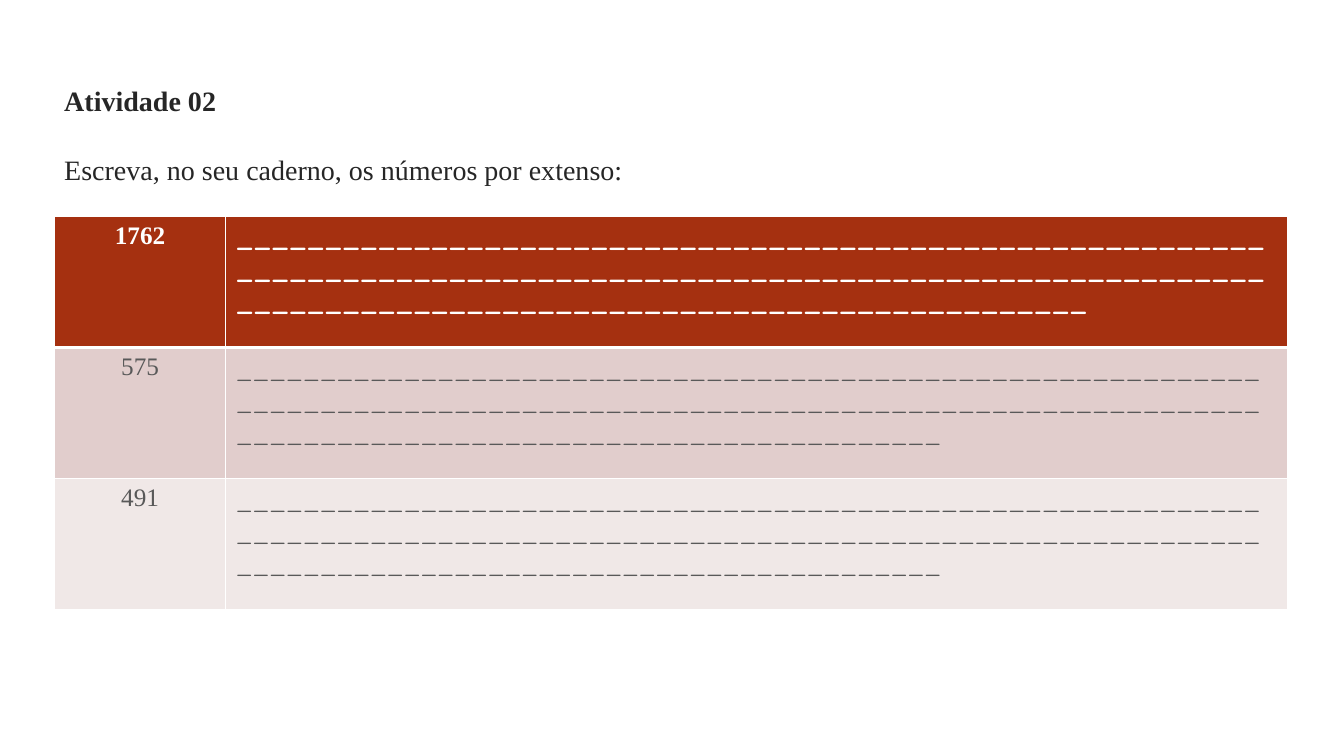
import pptx
import pptx.util
import pptx.dml.color
import pptx.enum.text
import pptx.oxml.ns
import lxml.etree
from dataclasses import dataclass

Cm, Pt = pptx.util.Cm, pptx.util.Pt


@dataclass(frozen=True)
class Theme:
    serif: str = "Times New Roman"
    rounded: str = "Quicksand"
    heading_size: int = 20
    table_size: int = 18
    heading: str = "262626"
    body: str = "595959"
    white: str = "FFFFFF"
    header_fill: str = "A53010"
    dark_band: str = "E1CDCC"
    light_band: str = "F0E8E7"


theme = Theme()


def style(paragraph, font_name, size, color, bold):
    for run in paragraph.runs:
        run.font.name = font_name
        run.font.size = Pt(size)
        run.font.bold = bold
        run.font.color.rgb = pptx.dml.color.RGBColor.from_string(color)


def add_border(cell, side, width):
    qn = pptx.oxml.ns.qn
    line = lxml.etree.SubElement(cell._tc.get_or_add_tcPr(), qn(f"a:ln{side}"), w=str(Pt(width)))
    solid = lxml.etree.SubElement(line, qn("a:solidFill"))
    lxml.etree.SubElement(solid, qn("a:srgbClr"), val=theme.white)


deck = pptx.Presentation()
deck.slide_width, deck.slide_height = Cm(33.87), Cm(19.05)
slide = deck.slides.add_slide(deck.slide_layouts[6])

# Heading and instruction
instructions = slide.shapes.add_textbox(Cm(1.37), Cm(1.98), Cm(16.94), Cm(2.82)).text_frame
instructions.word_wrap = True
instructions.text = "Atividade 02\nEscreva, no seu caderno, os números por extenso:"
activity, task = instructions.paragraphs
activity.space_after = Pt(25)
style(activity, theme.serif, theme.heading_size, theme.heading, True)
style(task, theme.serif, theme.heading_size, theme.heading, False)

# Numbers with blank lines for the answers
answer_blank = "_" * 164
rows = [
    ("1762", theme.header_fill, theme.white, True),
    ("575", theme.dark_band, theme.body, False),
    ("491", theme.light_band, theme.body, False),
]
numbers = slide.shapes.add_table(len(rows), 2, Cm(1.37), Cm(5.46), Cm(31.07), Cm(9.9)).table
numbers.columns[0].width = Cm(4.32)
numbers.columns[1].width = Cm(26.75)

for row_index, (number, fill, color, bold) in enumerate(rows):
    numbers.rows[row_index].height = Cm(3.3)
    # The rule under the header row is thicker
    widths = {
        "L": 1,
        "R": 1,
        "T": 3 if row_index == 1 else 1,
        "B": 3 if row_index == 0 else 1,
    }
    for column, (text, font_name) in enumerate([(number, theme.serif), (answer_blank, theme.rounded)]):
        cell = numbers.cell(row_index, column)
        cell.text = text
        style(cell.text_frame.paragraphs[0], font_name, theme.table_size, color, bold)
        for side, width in widths.items():
            add_border(cell, side, width)
        cell.fill.solid()
        cell.fill.fore_color.rgb = pptx.dml.color.RGBColor.from_string(fill)
    numbers.cell(row_index, 0).text_frame.paragraphs[0].alignment = pptx.enum.text.PP_ALIGN.CENTER

deck.save("out.pptx")
